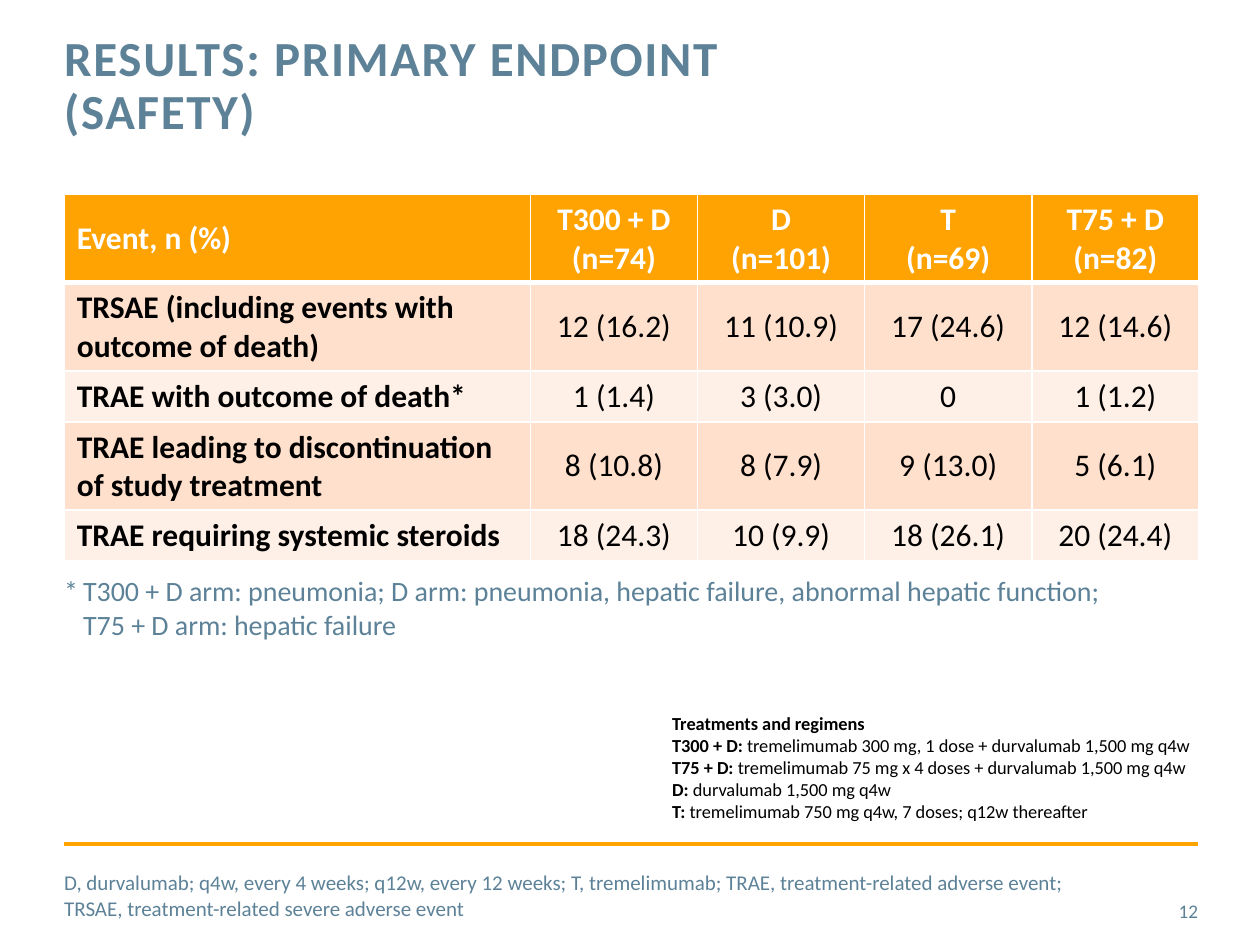
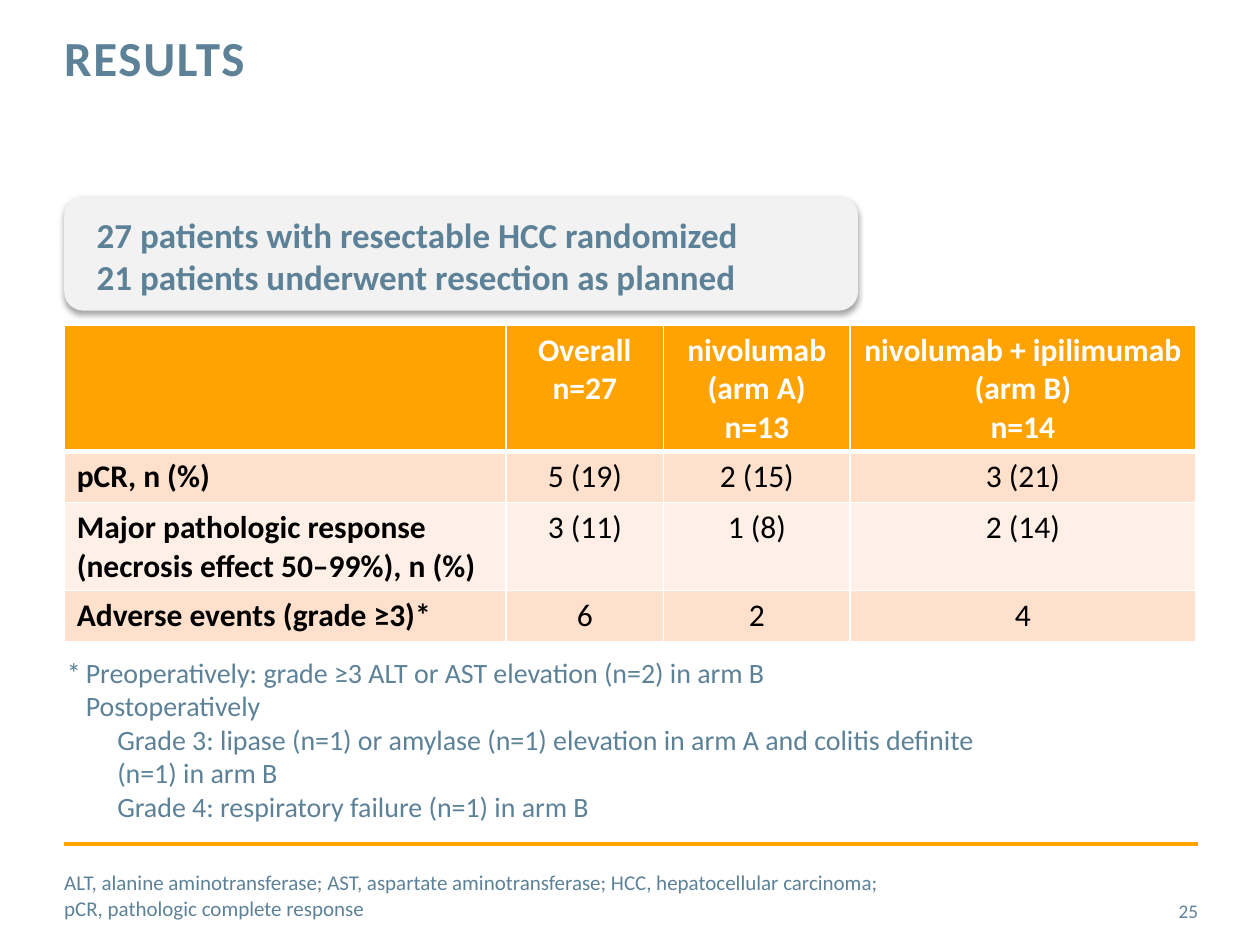
import dataclasses

import lxml.etree
import pptx
import pptx.dml.color
import pptx.enum.shapes
import pptx.enum.text
import pptx.oxml
import pptx.oxml.ns
import pptx.util

Pt = pptx.util.Pt
RGB = pptx.dml.color.RGBColor.from_string
qn = pptx.oxml.ns.qn
ALIGN = pptx.enum.text.PP_ALIGN
ANCHOR = pptx.enum.text.MSO_ANCHOR


@dataclasses.dataclass(frozen=True)
class Theme:
    font: str = "Calibri"
    slate: str = "5D8298"
    rule: str = "FFA402"
    header: str = "FEA302"
    bands: tuple = ("FFE0CC", "FFF0E7")
    panel: str = "F2F2F2"
    white: str = "FFFFFF"
    black: str = "000000"
    title_size: float = 28
    panel_size: float = 20
    table_size: float = 18
    note_size: float = 16
    footer_size: float = 12
    number_size: float = 11
    regimen_size: float = 10.5
    left: float = 36.7
    width: float = 648


T = Theme()


def style_run(r, size, color, bold=False):
    r.font.name = T.font
    r.font.size = Pt(size)
    r.font.bold = bold
    r.font.color.rgb = RGB(color)


def style_paragraphs(tf, size, color, bold=False, align=ALIGN.LEFT):
    for p in tf.paragraphs:
        p.alignment = align
        for r in p.runs:
            style_run(r, size, color, bold)


def set_insets(tf, x=0, y=0):
    tf.margin_left = tf.margin_right = Pt(x)
    tf.margin_top = tf.margin_bottom = Pt(y)


def add_text(s, box, text, size, color=T.slate, bold=False, align=ALIGN.LEFT,
             anchor=ANCHOR.TOP, insets=(0, 0), wrap=True):
    tf = s.shapes.add_textbox(*map(Pt, box)).text_frame
    tf.word_wrap = wrap
    tf.vertical_anchor = anchor
    set_insets(tf, *insets)
    tf.text = text
    style_paragraphs(tf, size, color, bold, align)
    return tf


def add_frame(prs, title, number, footer, footer_width):
    s = prs.slides.add_slide(prs.slide_layouts[5])
    sp = s.shapes.title
    sp.left, sp.top, sp.width, sp.height = map(Pt, (T.left, 19.5, 516, 63.5))
    tf = sp.text_frame
    tf.auto_size = pptx.enum.text.MSO_AUTO_SIZE.NONE
    tf.vertical_anchor = ANCHOR.TOP
    set_insets(tf)
    tf.text = title
    style_paragraphs(tf, T.title_size, T.slate, True)
    p = tf.paragraphs[0]
    p.line_spacing = Pt(30)
    for r in p.runs:
        r._r.get_or_add_rPr().set("spc", "100")

    y, right = Pt(482.4), T.left + T.width
    rule = s.shapes.add_connector(pptx.enum.shapes.MSO_CONNECTOR.STRAIGHT,
                                  Pt(T.left), y, Pt(right), y)
    rule.line.color.rgb = RGB(T.rule)
    rule.line.width = Pt(2)
    lxml.etree.SubElement(rule._element.spPr, qn("a:effectLst"))

    add_text(s, (T.left, 497, footer_width, 29), footer, T.footer_size,
             anchor=ANCHOR.MIDDLE)
    add_text(s, (right - 46, 506, 46, 29), number, T.number_size,
             align=ALIGN.RIGHT, anchor=ANCHOR.MIDDLE)
    return s


def add_borders(cell, widths):
    tc_pr = cell._tc.get_or_add_tcPr()
    for i, (side, width) in enumerate(zip("LRTB", widths)):
        ln = lxml.etree.Element(qn(f"a:ln{side}"), w=str(Pt(width)))
        fill = lxml.etree.SubElement(ln, qn("a:solidFill"))
        lxml.etree.SubElement(fill, qn("a:srgbClr"), val=T.white)
        tc_pr.insert(i, ln)


def add_results_table(s, box, rows, col_widths, row_heights, anchor):
    tbl = s.shapes.add_table(len(rows), len(rows[0]), *map(Pt, box)).table
    tbl.horz_banding = False
    for col, width in zip(tbl.columns, col_widths):
        col.width = Pt(width)
    for row, height in zip(tbl.rows, row_heights):
        row.height = Pt(height)
    for i, values in enumerate(rows):
        for j, value in enumerate(values):
            cell = tbl.cell(i, j)
            cell.text = value
            cell.vertical_anchor = anchor
            cell.fill.solid()
            cell.fill.fore_color.rgb = RGB(T.bands[(i - 1) % 2] if i else T.header)
            style_paragraphs(cell.text_frame, T.table_size,
                             T.black if i else T.white, i == 0 or j == 0,
                             ALIGN.CENTER if j else ALIGN.LEFT)
            add_borders(cell, (1, 1, 3 if i == 1 else 1, 1 if i else 3))


def add_footnote(s, box, lines, indents):
    tf = add_text(s, box, "\n".join(lines), T.note_size)
    for p, (margin, first) in zip(tf.paragraphs, indents):
        p_pr = p._p.get_or_add_pPr()
        p_pr.set("marL", str(Pt(margin)))
        p_pr.set("indent", str(Pt(first)))


def add_regimens(s, box, heading, regimens):
    tf = add_text(s, box, heading, T.regimen_size, T.black, True, insets=(7.2, 3.6))
    for arm, regimen in regimens:
        p = tf.add_paragraph()
        for text, bold in ((f"{arm}: ", True), (regimen, False)):
            r = p.add_run()
            r.text = text
            style_run(r, T.regimen_size, T.black, bold)


def add_patient_panel(s, box, text):
    x, y, w, h = box
    sp = s.shapes.add_shape(pptx.enum.shapes.MSO_SHAPE.ROUNDED_RECTANGLE, *map(Pt, box))
    sp.fill.solid()
    sp.fill.fore_color.rgb = RGB(T.panel)
    sp.line.fill.background()
    sp.shadow.inherit = False
    effects = sp._element.spPr.find(qn("a:effectLst"))
    shadow = lxml.etree.SubElement(effects, qn("a:outerShdw"), blurRad=str(Pt(3.1)),
                                   dist=str(Pt(1.8)), dir="5400000", rotWithShape="0")
    color = lxml.etree.SubElement(shadow, qn("a:srgbClr"), val=T.black)
    lxml.etree.SubElement(color, qn("a:alpha"), val="35000")
    add_text(s, (x + 11.5, y + 6.5, w - 69, h - 10), text, T.panel_size, bold=True,
             insets=(7.2, 3.6), wrap=False)


def build_safety_slide(prs):
    s = add_frame(prs, "RESULTS: PRIMARY ENDPOINT\v(SAFETY)", "12",
                  "D, durvalumab; q4w, every 4 weeks; q12w, every 12 weeks; T, tremelimumab; "
                  "TRAE, treatment-related adverse event; "
                  "TRSAE, treatment-related severe adverse event", 576)
    rows = [
        ("Event, n (%)", "T300 + D\n(n=74)", "D\n(n=101)", "T\n(n=69)", "T75 + D\n(n=82)"),
        ("TRSAE (including events with outcome of death)",
         "12 (16.2)", "11 (10.9)", "17 (24.6)", "12 (14.6)"),
        ("TRAE with outcome of death*", "1 (1.4)", "3 (3.0)", "0", "1 (1.2)"),
        ("TRAE leading to discontinuation of study treatment",
         "8 (10.8)", "8 (7.9)", "9 (13.0)", "5 (6.1)"),
        ("TRAE requiring systemic steroids",
         "18 (24.3)", "10 (9.9)", "18 (26.1)", "20 (24.4)"),
    ]
    add_results_table(s, (T.left, 111, T.width, 209.6), rows, [266.4] + [95.5] * 4,
                      (50.4, 50.4, 29.2, 50.4, 29.2), ANCHOR.MIDDLE)
    add_footnote(s, (T.left, 328, 605, 39),
                 ["*\tT300 + D arm: pneumonia; D arm: pneumonia, hepatic failure, "
                  "abnormal hepatic function; T75 + D arm: hepatic failure"],
                 [(10.8, -10.8)])
    add_regimens(s, (377, 403.2, 317.5, 70.5), "Treatments and regimens", [
        ("T300 + D", "tremelimumab 300 mg, 1 dose + durvalumab 1,500 mg q4w"),
        ("T75 + D", "tremelimumab 75 mg x 4 doses + durvalumab 1,500 mg q4w"),
        ("D", "durvalumab 1,500 mg q4w"),
        ("T", "tremelimumab 750 mg q4w, 7 doses; q12w thereafter"),
    ])


def build_response_slide(prs):
    s = add_frame(prs, "RESULTS", "25",
                  "ALT, alanine aminotransferase; AST, aspartate aminotransferase; "
                  "HCC, hepatocellular carcinoma; pCR, pathologic complete response", 488)
    add_patient_panel(s, (T.left, 112, 453.6, 65.5),
                      "27 patients with resectable HCC randomized\n"
                      "21 patients underwent resection as planned")
    rows = [
        ("", "Overall\nn=27", "nivolumab\n(arm A)\nn=13",
         "nivolumab + ipilimumab\n(arm B)\nn=14"),
        ("pCR, n (%)", "5 (19)", "2 (15)", "3 (21)"),
        ("Major pathologic response (necrosis effect 50–99%), n (%)",
         "3 (11)", "1 (8)", "2 (14)"),
        ("Adverse events (grade ≥3)*", "6", "2", "4"),
    ]
    add_results_table(s, (T.left, 185.8, 646.6, 180.8), rows, (252.5, 90, 106.6, 197.5),
                      (72, 29.2, 50.4, 29.2), ANCHOR.TOP)
    add_footnote(s, (38.2, 374.4, 638, 98), [
        "*\tPreoperatively: grade ≥3 ALT or AST elevation (n=2) in arm B",
        "Postoperatively",
        "Grade 3: lipase (n=1) or amylase (n=1) elevation in arm A and colitis definite",
        "(n=1) in arm B",
        "Grade 4: respiratory failure (n=1) in arm B",
    ], [(10.8, -10.8), (10.8, 0)] + [(28.8, 0)] * 3)


def main():
    prs = pptx.Presentation()
    prs.slide_width, prs.slide_height = Pt(720), Pt(540)
    build_safety_slide(prs)
    build_response_slide(prs)
    prs.save("out.pptx")


if __name__ == "__main__":
    main()
